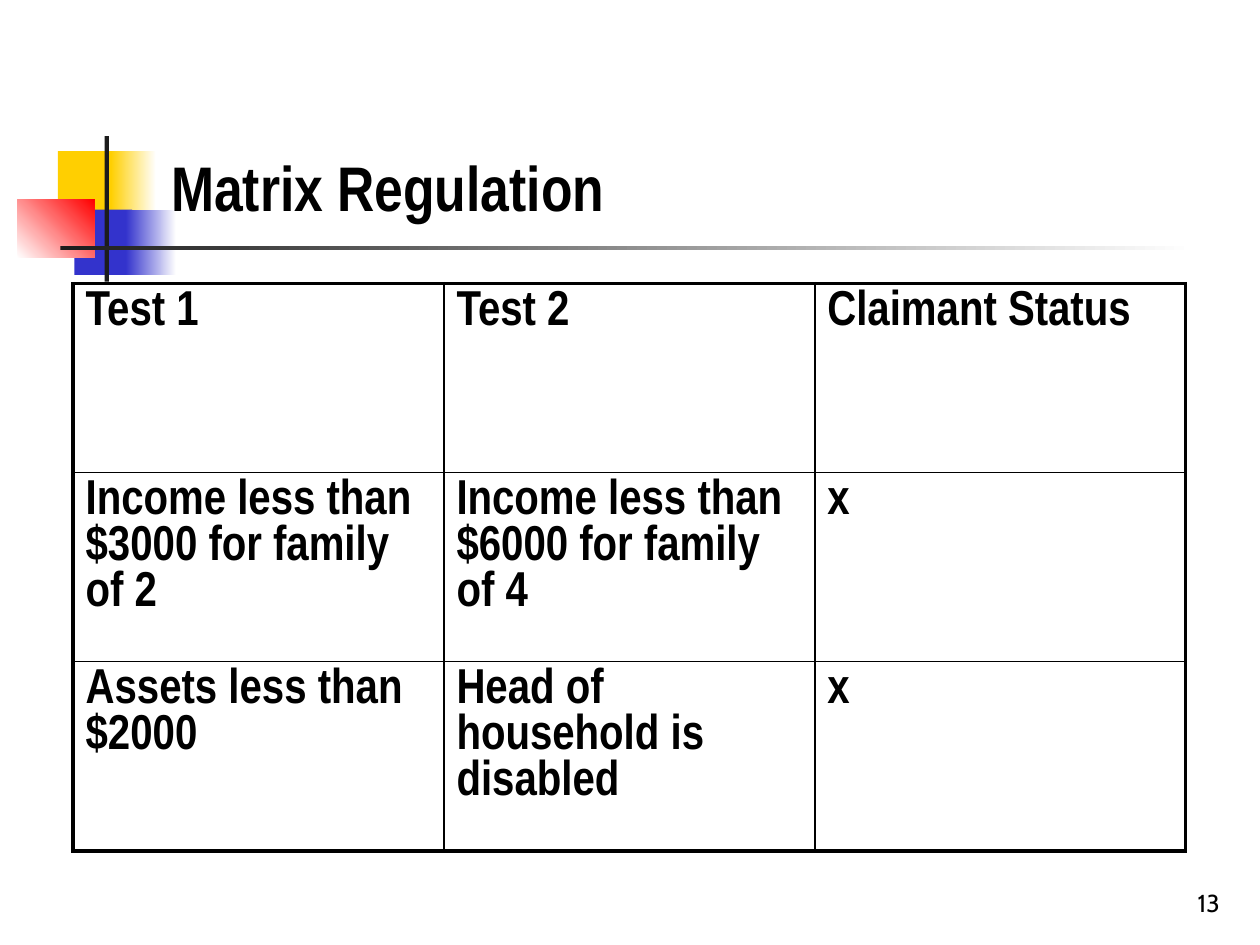
from lxml.etree import SubElement
from pptx import Presentation
from pptx.dml.color import RGBColor
from pptx.enum.shapes import MSO_SHAPE
from pptx.enum.text import MSO_ANCHOR, PP_ALIGN
from pptx.oxml.ns import qn
from pptx.util import Inches, Pt

COLORS = {
    "text": "000000",
    "white": "FFFFFF",
    "yellow": "FFCF01",
    "blue": "3333CC",
    "red": "FF0000",
    "rule": "1C1C1C",
}
WIDTH, HEIGHT = Inches(10), Inches(7.5)
HEADING_FONT, NUMBER_FONT = "Arial Narrow", "Cabin"
ROWS = [
    ["Test 1", "Test 2", "Claimant Status"],
    ["Income less than $3000 for family of 2",
     "Income less than $6000 for family of 4", "x"],
    ["Assets less than $2000", "Head of household is disabled", "x"],
]
THIN, THICK = Pt(1), Pt(2.25)


def rgb(name):
    return RGBColor.from_string(COLORS[name])


def place(box, left, top, width, height):
    x, y, w, h = box
    return (int(x + w * left), int(y + h * top), int(w * width), int(h * height))


def add_run(p, text, size, font, bold=False):
    r = p.add_run()
    r.text = text
    r.font.size = Pt(size)
    r.font.name = font
    r.font.bold = bold
    r.font.color.rgb = rgb("text")


def add_block(s, box, start, end=None, angle=0):
    sp = s.shapes.add_shape(MSO_SHAPE.RECTANGLE, *box)
    sp.shadow.inherit = False
    sp.line.fill.background()
    if end is None:
        sp.fill.solid()
        sp.fill.fore_color.rgb = rgb(start)
        return
    sp.fill.gradient()
    sp.fill.gradient_angle = angle
    for stop, position, name in zip(sp.fill.gradient_stops, (0, 1), (start, end)):
        stop.position = position
        stop.color.rgb = rgb(name)


def add_ornament(s, box):
    blocks = [
        ((0.046, 0.16, 0.048, 0.07), "yellow"),
        ((0.088, 0.16, 0.036, 0.07), "yellow", "white"),
        ((0.059, 0.222, 0.046, 0.069), "blue"),
        ((0.1, 0.222, 0.04, 0.069), "blue", "white"),
        ((0.014, 0.211, 0.061, 0.062), "white", "red", 45),
        ((0.083, 0.144, 0.0035, 0.154), "rule"),
        ((0.048, 0.26, 0.9, 0.0045), "rule", "white"),
    ]
    for share, *paint in blocks:
        add_block(s, place(box, *share), *paint)


def add_text(s, box, text, size, font, bold=False, align=PP_ALIGN.LEFT):
    tf = s.shapes.add_textbox(*box).text_frame
    tf.word_wrap = True
    tf.vertical_anchor = MSO_ANCHOR.BOTTOM
    p = tf.paragraphs[0]
    p.alignment = align
    add_run(p, text, size, font, bold)


def set_borders(cell, widths):
    tcPr = cell._tc.get_or_add_tcPr()
    for side, width in widths.items():
        ln = SubElement(tcPr, qn(f"a:ln{side}"), w=str(width))
        fill = SubElement(ln, qn("a:solidFill"))
        SubElement(fill, qn("a:srgbClr"), val=COLORS["text"])


def add_matrix(s, box, rows):
    last_row, last_col = len(rows) - 1, len(rows[0]) - 1
    table = s.shapes.add_table(len(rows), len(rows[0]), *box).table
    table.first_row = table.horz_banding = False
    for i, row in enumerate(rows):
        for j, text in enumerate(row):
            cell = table.cell(i, j)
            set_borders(cell, {
                "L": THICK if j == 0 else THIN,
                "R": THICK if j == last_col else THIN,
                "T": THICK if i == 0 else THIN,
                "B": THICK if i == last_row else THIN,
            })
            cell.fill.background()
            add_run(cell.text_frame.paragraphs[0], text, 28, HEADING_FONT, True)


def main():
    prs = Presentation()
    prs.slide_width, prs.slide_height = WIDTH, HEIGHT
    s = prs.slides.add_slide(prs.slide_layouts[6])
    page = (0, 0, WIDTH, HEIGHT)
    add_ornament(s, page)
    add_text(s, place(page, 0.77, 0.911, 0.208, 0.066), "13", 14, NUMBER_FONT,
             align=PP_ALIGN.RIGHT)
    add_text(s, place(page, 0.126, 0.031, 0.852, 0.213), "Matrix Regulation", 36,
             HEADING_FONT, True)
    add_matrix(s, place(page, 0.058, 0.3, 0.883, 0.6), ROWS)
    prs.save("out.pptx")


if __name__ == "__main__":
    main()
